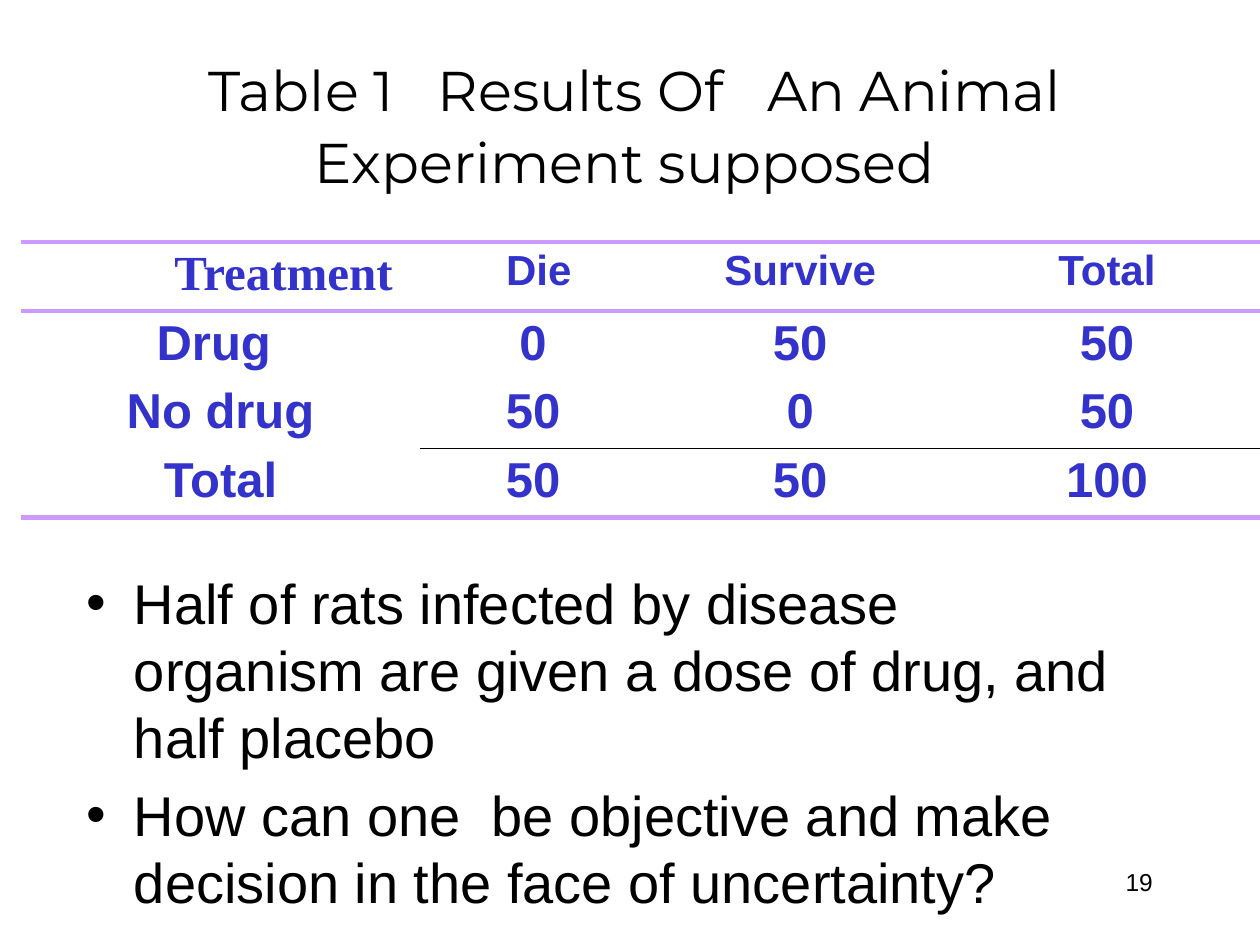
"""Build a slide with a table of trial results above two bullet points."""
from lxml.etree import SubElement
from pptx import Presentation
from pptx.dml.color import RGBColor as Rgb
from pptx.enum.text import MSO_ANCHOR as Anchor, MSO_AUTO_SIZE as Fit, PP_ALIGN as Align
from pptx.oxml import parse_xml
from pptx.oxml.ns import nsdecls, qn
from pptx.util import Cm, Pt

BLUE, LILAC, BLACK = "3333CC", "CC99FF", "000000"
TITLE = [(" ", 44), ("Table 1   Results Of   An Animal Experiment supposed", 32)]
ROWS = [
    ("Treatment", " Die", "Survive", "Total"),
    ("Drug ", "0", "50", "50"),
    ("No drug", "50", "0", "50"),
    ("Total", "50", "50", "100"),
]
WIDTHS = [8.03, 4.57, 6.2, 6.17]
HIGH = 1.36
RULES = {0: (LILAC, 3, 0), 1: (LILAC, 2.25, 0), 3: (BLACK, 1, 1), 4: (LILAC, 3, 0)}
POINTS = [
    "Half of rats infected by disease organism are given a dose of drug, and half placebo",
    "How can one  be objective and make decision in the face of uncertainty?",
]
PAGE = "19"


def paint(color, hue):
    color.rgb = Rgb.from_string(hue)


def write(para, text, size, font="Arial", hue=BLACK, bold=False):
    run = para.add_run()
    run.text = text
    run.font.size, run.font.name, run.font.bold = Pt(size), font, bold
    paint(run.font.color, hue)


def add_box(slide, *place):
    frame = slide.shapes.add_textbox(*map(Cm, place)).text_frame
    frame.word_wrap = True
    return frame


def add_edge(cell, slot, tag, rule):
    fill, width = "<a:noFill/>", 0
    if rule:
        fill = f'<a:solidFill><a:srgbClr val="{rule[0]}"/></a:solidFill>'
        width = Pt(rule[1])
    line = parse_xml(f'<a:{tag} {nsdecls("a")} w="{int(width)}">{fill}</a:{tag}>')
    cell._tc.get_or_add_tcPr().insert(slot, line)


def fill_cell(cell, row, col):
    cell.fill.background()
    cell.margin_top = cell.margin_bottom = Cm(0.1)
    para = cell.text_frame.paragraphs[0]
    para.alignment = Align.CENTER
    corner = row == col == 0
    if corner:
        para._p.get_or_add_pPr().set("marL", str(Cm(2.54)))
    size = 24 if row == 0 and col else 28
    font = "Times New Roman" if corner else "Arial"
    write(para, ROWS[row][col], size, font, BLUE, True)
    above, below = [
        rule if rule and col >= rule[2] else None
        for rule in (RULES.get(row), RULES.get(row + 1))
    ]
    edges = [("lnL", None), ("lnR", None), ("lnT", above), ("lnB", below)]
    for slot, (tag, rule) in enumerate(edges):
        add_edge(cell, slot, tag, rule)


def add_grid(slide):
    count = len(ROWS)
    place = (0.43, 4.88, sum(WIDTHS), HIGH * count)
    table = slide.shapes.add_table(count, len(WIDTHS), *map(Cm, place)).table
    table.first_row = table.horz_banding = False
    for col, width in enumerate(WIDTHS):
        table.columns[col].width = Cm(width)
    for row in range(count):
        table.rows[row].height = Cm(HIGH)
        for col in range(len(WIDTHS)):
            fill_cell(table.cell(row, col), row, col)


def add_title(slide):
    title = slide.shapes.title
    title.left, title.top, title.width, title.height = map(Cm, (1.09, 0.71, 23.01, 3.2))
    frame = title.text_frame
    frame.auto_size, frame.vertical_anchor = Fit.NONE, Anchor.MIDDLE
    para = frame.paragraphs[0]
    para.alignment = Align.CENTER
    for text, size in TITLE:
        write(para, text, size, "Montserrat")


def add_points(slide):
    frame = add_box(slide, 1.5, 11.33, 21.59, 6.15)
    for num, text in enumerate(POINTS):
        para = frame.add_paragraph() if num else frame.paragraphs[0]
        para.space_before = Pt(6)
        props = para._p.get_or_add_pPr()
        props.set("marL", str(Cm(0.95)))
        props.set("indent", str(-Cm(0.95)))
        SubElement(props, qn("a:buFont")).set("typeface", "Arial")
        SubElement(props, qn("a:buChar")).set("char", "•")
        write(para, text, 32)


def main():
    deck = Presentation()
    deck.slide_width, deck.slide_height = Cm(25.4), Cm(19.05)
    slide = deck.slides.add_slide(deck.slide_layouts[5])
    para = add_box(slide, 18.21, 17.35, 5.28, 1.27).paragraphs[0]
    para.alignment = Align.RIGHT
    write(para, PAGE, 14)
    add_title(slide)
    add_grid(slide)
    add_points(slide)
    deck.save("out.pptx")


if __name__ == "__main__":
    main()
